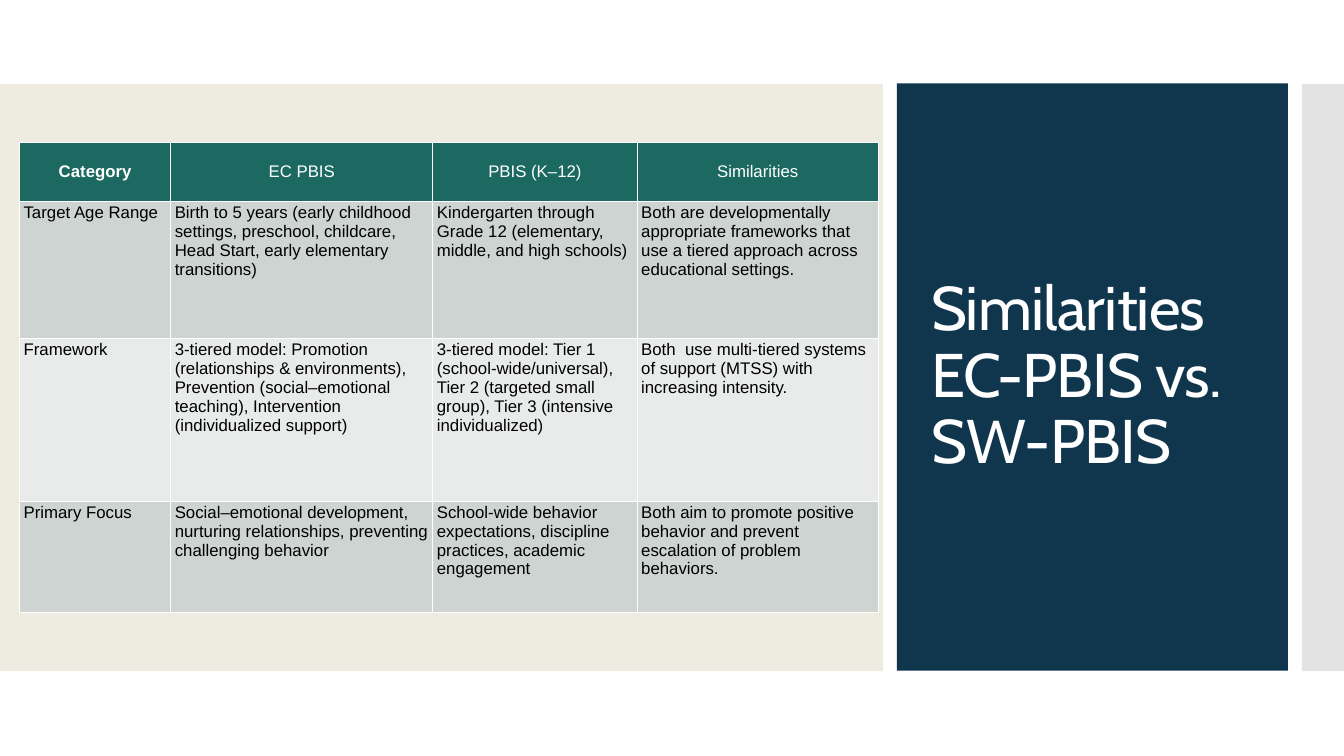
import pptx
import pptx.dml.color
import pptx.enum.shapes
import pptx.enum.text
import pptx.oxml.ns
import pptx.util
from lxml import etree

Pt = pptx.util.Pt
qn = pptx.oxml.ns.qn
ALIGN = pptx.enum.text.PP_ALIGN
ANCHOR = pptx.enum.text.MSO_ANCHOR

COLORS = {
    "white": "FFFFFF",
    "black": "000000",
    "sand": "EEECE1",
    "navy": "10364E",
    "gray": "C8C8C8",
    "green": "1B6960",
    "dark": "CDD4D2",
    "light": "E8EBEA",
}

HEADS = ["Category", "EC PBIS", "PBIS (K–12)", "Similarities"]
ROWS = [
    ["Target Age Range",
     "Birth to 5 years (early childhood settings, preschool, childcare, "
     "Head Start, early elementary transitions)",
     "Kindergarten through Grade 12 (elementary, middle, and high schools)",
     "Both are developmentally appropriate frameworks that use a tiered "
     "approach across educational settings."],
    ["Framework",
     "3-tiered model: Promotion (relationships & environments), Prevention "
     "(social–emotional teaching), Intervention (individualized support)",
     "3-tiered model: Tier 1 (school-wide/universal), Tier 2 (targeted small "
     "group), Tier 3 (intensive individualized)",
     "Both  use multi-tiered systems of support (MTSS) with increasing "
     "intensity."],
    ["Primary Focus",
     "Social–emotional development, nurturing relationships, preventing "
     "challenging behavior",
     "School-wide behavior expectations, discipline practices, academic "
     "engagement",
     "Both aim to promote positive behavior and prevent escalation of problem "
     "behaviors."],
]
WIDTHS = [162, 280.8, 218.9, 258.5]
HEIGHTS = [63.4, 146.9, 174.2, 118.8]


def tint(name):
    return pptx.dml.color.RGBColor.from_string(COLORS[name])


def write(frame, text, font="Arial", size=18, color="black", bold=False,
          align=ALIGN.LEFT, lead=None, track=None):
    """Put one formatted paragraph in a frame; track is in points."""
    para = frame.paragraphs[0]
    para.alignment = align
    para.line_spacing = lead
    run = para.add_run()
    run.text = text
    run.font.name = font
    run.font.size = Pt(size)
    run.font.bold = bold
    run.font.color.rgb = tint(color)
    if track is not None:
        run.font._element.set("spc", str(round(track * 100)))


class Deck:
    def __init__(self, width, height, back):
        self.show = pptx.Presentation()
        self.show.slide_width = Pt(width)
        self.show.slide_height = Pt(height)
        self.slide = self.show.slides.add_slide(self.show.slide_layouts[6])
        fill = self.slide.background.fill
        fill.solid()
        fill.fore_color.rgb = tint(back)

    def panel(self, left, top, width, height, color, alpha=None):
        """Draw a plain block; alpha is its opacity in percent."""
        block = self.slide.shapes.add_shape(
            pptx.enum.shapes.MSO_SHAPE.RECTANGLE,
            Pt(left), Pt(top), Pt(width), Pt(height))
        block.shadow.inherit = False
        block.fill.solid()
        block.fill.fore_color.rgb = tint(color)
        block.line.fill.background()
        if alpha is not None:
            shade = block._element.spPr.find(qn("a:solidFill"))[0]
            etree.SubElement(shade, qn("a:alpha"), val=str(alpha * 1000))

    def title(self, left, top, width, height, text):
        frame = self.slide.shapes.add_textbox(
            Pt(left), Pt(top), Pt(width), Pt(height)).text_frame
        frame.word_wrap = True
        frame.vertical_anchor = ANCHOR.MIDDLE
        write(frame, text, font="Cabin", size=66, color="white",
              lead=0.9, track=-0.9)

    def border(self, cell, color, width):
        props = cell._tc.get_or_add_tcPr()
        for side in ("lnL", "lnR", "lnT", "lnB"):
            line = etree.SubElement(props, qn("a:" + side), w=str(Pt(width)))
            fill = etree.SubElement(line, qn("a:solidFill"))
            etree.SubElement(fill, qn("a:srgbClr"), val=COLORS[color])

    def cell(self, cell, text, fill, **style):
        cell.margin_left = cell.margin_right = Pt(4.4)
        cell.margin_top = cell.margin_bottom = Pt(2.2)
        self.border(cell, "white", 1)
        cell.fill.solid()
        cell.fill.fore_color.rgb = tint(fill)
        write(cell.text_frame, text, **style)

    def table(self, left, top, heads, rows, widths, heights):
        grid = self.slide.shapes.add_table(
            len(heights), len(widths), Pt(left), Pt(top),
            Pt(sum(widths)), Pt(sum(heights))).table
        for column, width in zip(grid.columns, widths):
            column.width = Pt(width)
        for row, height in zip(grid.rows, heights):
            row.height = Pt(height)
        for c, text in enumerate(heads):
            head = grid.cell(0, c)
            head.vertical_anchor = ANCHOR.MIDDLE
            self.cell(head, text, "green", color="white", bold=c == 0,
                      align=ALIGN.CENTER)
        for r, texts in enumerate(rows, 1):
            for c, text in enumerate(texts):
                self.cell(grid.cell(r, c), text, "dark" if r % 2 else "light")


def main():
    deck = Deck(1440, 810, "white")
    deck.panel(0, 90, 946, 629, "sand")
    deck.panel(961, 89.5, 419, 629, "navy")
    deck.title(990.7, 132.5, 348.5, 543.6, "Similarities EC-PBIS vs. SW-PBIS")
    deck.panel(1395, 90, 45, 629, "gray", alpha=50)
    deck.table(20.9, 152.6, HEADS, ROWS, WIDTHS, HEIGHTS)
    deck.show.save("out.pptx")


if __name__ == "__main__":
    main()
